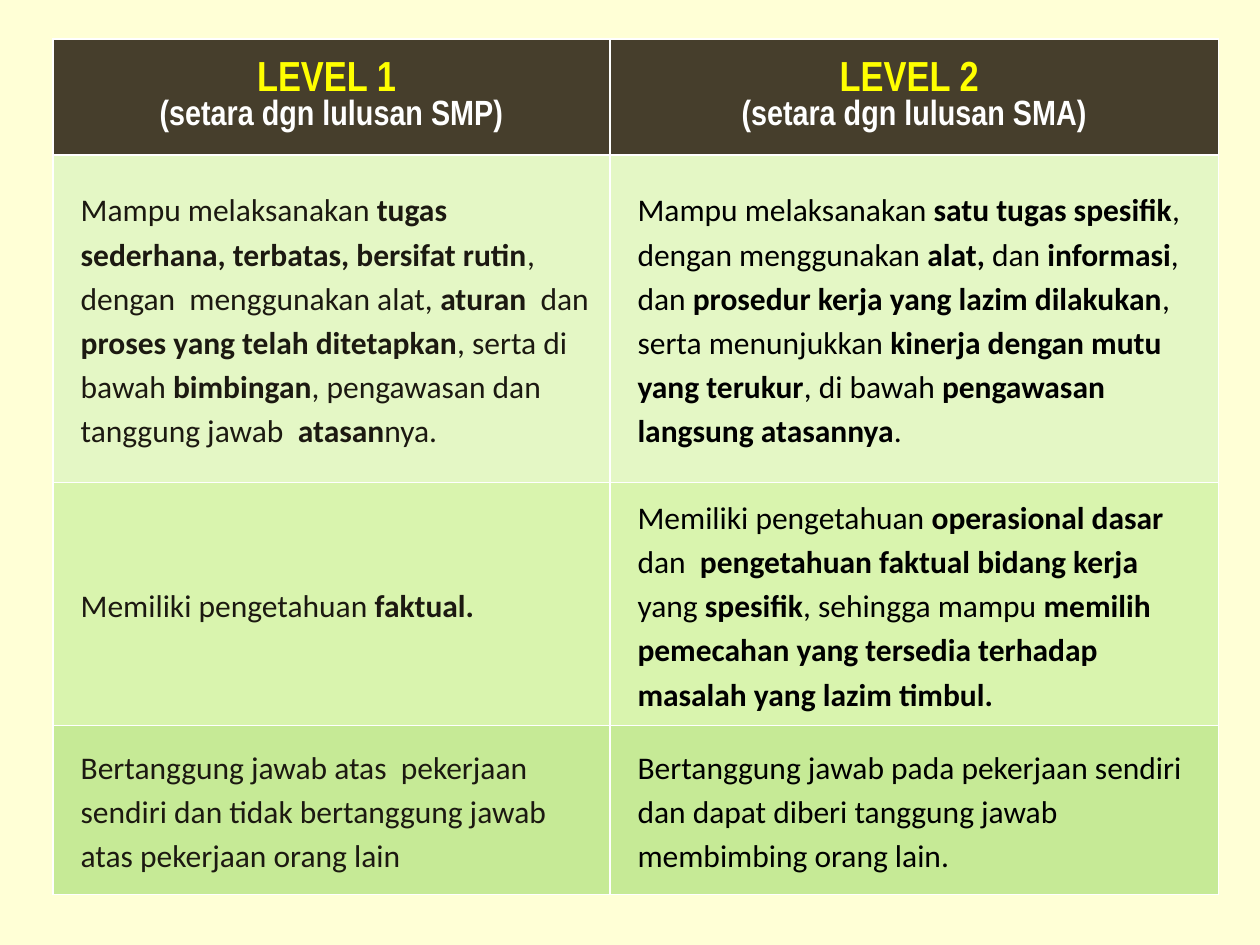
from lxml import etree
from pptx import Presentation
from pptx.dml.color import RGBColor
from pptx.enum.text import MSO_ANCHOR, PP_ALIGN
from pptx.oxml.ns import qn
from pptx.util import Inches, Pt

MIDDLE = MSO_ANCHOR.MIDDLE
CENTER, LEFT = PP_ALIGN.CENTER, PP_ALIGN.LEFT

HEADS = [
    ("LEVEL 1 ", "(setara dgn lulusan SMP)"),
    ("LEVEL 2 ", "(setara dgn lulusan SMA)"),
]
BODY = [
    (
        "Mampu melaksanakan *tugas sederhana, terbatas, bersifat rutin*, "
        "dengan  menggunakan alat, *aturan  *dan *proses yang telah ditetapkan*, "
        "serta di bawah *bimbingan*, pengawasan dan tanggung jawab  *atasan*nya.",
        "Mampu melaksanakan *satu tugas spesifik*, dengan menggunakan *alat, *dan "
        "*informasi*, dan *prosedur kerja yang lazim dilakukan*, serta menunjukkan "
        "*kinerja dengan mutu yang terukur*, di bawah "
        "*pengawasan langsung atasannya*.",
    ),
    (
        "Memiliki pengetahuan *faktual.*",
        "Memiliki pengetahuan *operasional dasar *dan  "
        "*pengetahuan faktual bidang kerja* yang *spesifik*, sehingga mampu "
        "*memilih pemecahan yang tersedia terhadap masalah yang lazim timbul.*",
    ),
    (
        "Bertanggung jawab atas  pekerjaan sendiri dan tidak bertanggung jawab "
        "atas pekerjaan orang lain",
        "Bertanggung jawab pada pekerjaan sendiri dan dapat diberi tanggung jawab "
        "membimbing orang lain.",
    ),
]
PAPER, EDGE = "FFFFD6", "FFFFFF"
FILLS = ["463E2C", "E4F7C5", "D9F4AE", "C6EA96"]
INKS = ["1C1911", "000000"]
COLS = [4.42, 4.83]
ROWS = [0.92, 2.6, 1.93, 1.34]
SPOT = (0.42, 0.31)
HEAD = [
    {"name": "Arial Narrow", "size": Pt(24), "bold": True, "color": "FFFF00"},
    {"name": "Arial Narrow", "size": Pt(20), "bold": True, "color": "FFFFFF"},
]
TEXT = {"name": "Calibri", "size": Pt(18)}
HEAD_PAR = {"alignment": CENTER}
BODY_PAR = {"alignment": LEFT, "line_spacing": 1.15, "space_after": Pt(10)}


def paint(fill, tone):
    fill.solid()
    fill.fore_color.rgb = RGBColor.from_string(tone)


def put(item, form):
    for key, value in form.items():
        if key == "color":
            paint(item.fill, value)
        else:
            setattr(item, key, value)


def frame(cell):
    props = cell._tc.get_or_add_tcPr()
    for side in "LRTB":
        line = etree.SubElement(props, qn(f"a:ln{side}"), w=str(Pt(1)))
        solid = etree.SubElement(line, qn("a:solidFill"))
        etree.SubElement(solid, qn("a:srgbClr"), val=EDGE)


def write(par, text, form):
    for step, part in enumerate(text.split("*")):
        if part:
            run = par.add_run()
            run.text = part
            put(run.font, {"bold": step % 2 == 1, **form})


def fill_head(cell, lines):
    box = cell.text_frame
    for step, (line, form) in enumerate(zip(lines, HEAD)):
        par = box.add_paragraph() if step else box.paragraphs[0]
        put(par, HEAD_PAR)
        write(par, line, form)


def fill_body(cell, text, ink):
    par = cell.text_frame.paragraphs[0]
    put(par, BODY_PAR)
    props = par._p.get_or_add_pPr()
    props.set("marL", str(Inches(0.12)))
    props.set("indent", "0")
    write(par, text, {**TEXT, "color": ink})


def main():
    deck = Presentation()
    deck.slide_width, deck.slide_height = Inches(10), Inches(7.5)
    slide = deck.slides.add_slide(deck.slide_layouts[6])
    paint(slide.background.fill, PAPER)
    area = map(Inches, (*SPOT, sum(COLS), sum(ROWS)))
    table = slide.shapes.add_table(len(ROWS), len(COLS), *area).table
    for col, width in zip(table.columns, COLS):
        col.width = Inches(width)
    for row, height in zip(table.rows, ROWS):
        row.height = Inches(height)
    for r, texts in enumerate([HEADS, *BODY]):
        for c, text in enumerate(texts):
            cell = table.cell(r, c)
            frame(cell)
            paint(cell.fill, FILLS[r])
            cell.vertical_anchor = MIDDLE
            if r:
                fill_body(cell, text, INKS[c])
            else:
                fill_head(cell, text)
    deck.save("out.pptx")


if __name__ == "__main__":
    main()
